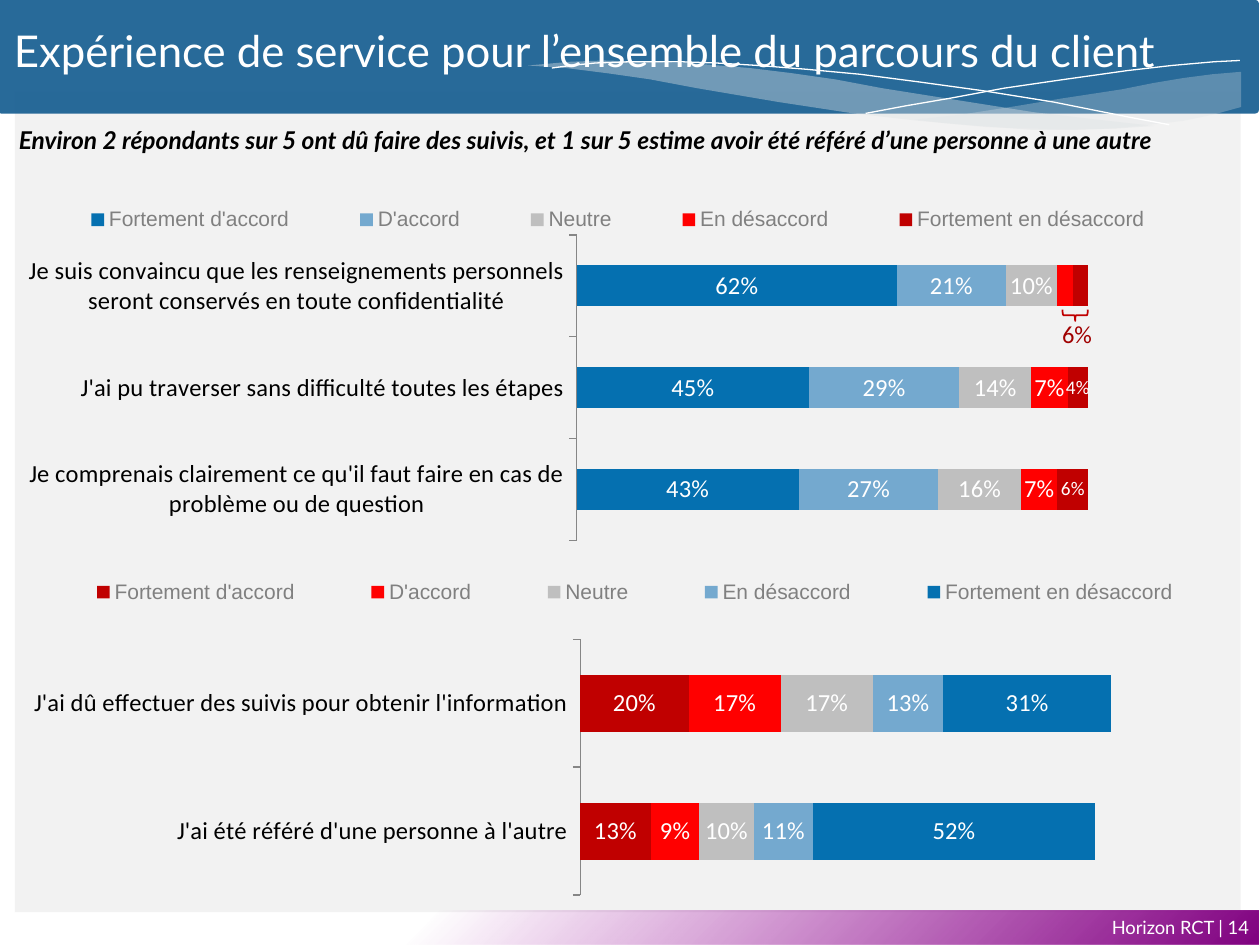
from lxml import etree
from pptx import Presentation, util as u
from pptx.chart.data import CategoryChartData
from pptx.dml.color import RGBColor
from pptx.enum import chart as ch, shapes, text
from pptx.oxml import parse_xml
from pptx.oxml.ns import nsdecls, qn


def paint(fill, colour, opacity=100):
    fill.solid()
    fill.fore_color.rgb = RGBColor.from_string(colour)
    if opacity < 100:
        srgb = fill._xPr.find(".//" + qn("a:srgbClr"))
        etree.SubElement(srgb, qn("a:alpha")).set("val", str(opacity * 1000))


def add_text(place, words, size, font, colour, align=text.PP_ALIGN.LEFT,
             anchor=text.MSO_ANCHOR.TOP, wrap=True, strong=False):
    box = page.shapes.add_textbox(*map(u.Cm, place))
    box.text_frame.word_wrap = wrap
    box.text_frame.vertical_anchor = anchor
    para = box.text_frame.paragraphs[0]
    para.alignment = align
    span = para.add_run()
    span.text = words
    span.font.size, span.font.name = u.Pt(size), font
    span.font.bold = span.font.italic = strong
    paint(span.font.fill, colour)


deck = Presentation()
deck.slide_width, deck.slide_height = u.Cm(25.4), u.Cm(19.05)
page = deck.slides.add_slide(deck.slide_layouts[6])

# Grey panel, footer band and header band
bands = []
for kind, place, colour, opacity in [
    (shapes.MSO_SHAPE.RECTANGLE, (0.3, 1.85, 24.71, 16.54), "F2F2F2", 100),
    (shapes.MSO_SHAPE.RECTANGLE, (-0.05, 18.36, 25.43, 0.69), "800080", 100),
    (shapes.MSO_SHAPE.ROUNDED_RECTANGLE, (-0.05, 0, 25.43, 2.29), "1D6294", 95),
]:
    band = page.shapes.add_shape(kind, *map(u.Cm, place))
    band.shadow.inherit = False
    band.line.fill.background()
    paint(band.fill, colour, opacity)
    bands.append(band)
panel, footer, header = bands
header.adjustments[0] = 0.034

# Footer fades from purple at the right to clear at the left
solid = footer._element.spPr.find(qn("a:solidFill"))
solid.getparent().replace(solid, parse_xml(
    f'<a:gradFill {nsdecls("a")} rotWithShape="1"><a:gsLst>'
    '<a:gs pos="0"><a:srgbClr val="800080"/></a:gs>'
    '<a:gs pos="66000"><a:srgbClr val="9A009A"><a:alpha val="0"/></a:srgbClr></a:gs>'
    '</a:gsLst><a:path path="circle"><a:fillToRect l="100000" t="100000"/></a:path>'
    '</a:gradFill>'))
add_text((0.03, 18.08, 25.4, 1.24), "Horizon RCT | 14", 10.5, "Lato", "FFFFFF",
         text.PP_ALIGN.RIGHT, text.MSO_ANCHOR.MIDDLE)

# Header waves, in units of a hundredth of an inch; opacity 0 means a bare line
waves = [
    (29, [(985, 57), (962, 59), (939, 62), (915, 66), (890, 71), (844, 78),
          (802, 85), (763, 91), (726, 95), (751, 98), (784, 101), (815, 102),
          (852, 103), (884, 102), (913, 99), (939, 96), (963, 91), (985, 85)]),
    (40, [(916, 100), (871, 95), (820, 89), (763, 80), (700, 70), (663, 63),
          (628, 58), (595, 54), (546, 50), (511, 49), (480, 48), (453, 49),
          (419, 52), (449, 54), (481, 58), (516, 63), (553, 70), (618, 81),
          (677, 90), (730, 96), (777, 100), (818, 103), (855, 103), (887, 102)]),
    (0, [(438, 54), (453, 52), (473, 50), (501, 49), (539, 49), (568, 50),
         (602, 52), (640, 55), (683, 59), (729, 65), (780, 72), (836, 81),
         (896, 93), (928, 99)]),
    (0, [(687, 90), (719, 84), (754, 78), (797, 70), (845, 63), (895, 56),
         (930, 52), (964, 49), (984, 48)]),
]
for opacity, points in waves:
    builder = page.shapes.build_freeform(*points[0], scale=u.Cm(0.0254))
    builder.add_line_segments(points[1:], close=opacity > 0)
    wave = builder.convert_to_shape()
    wave.shadow.inherit = False
    if opacity:
        paint(wave.fill, "DFE3E5", opacity)
        wave.line.fill.background()
    else:
        wave.fill.background()
        paint(wave.line.fill, "FFFFFF")
        wave.line.width = u.Pt(0)

# Title and key finding
add_text((0.03, 0.36, 24.99, 1.68),
         "Expérience de service pour l’ensemble du parcours du client",
         25, "Lato", "FFFFFF")
add_text((0.13, 2.39, 24.99, 1.45),
         "Environ 2 répondants sur 5 ont dû faire des suivis, et 1 sur 5 estime "
         "avoir été référé d’une personne à une autre",
         14, "Lato", "000000", strong=True)

# Stacked bar charts
answers = ["Fortement d'accord", "D'accord", "Neutre", "En désaccord",
           "Fortement en désaccord"]
scale = ["0570B0", "74A9CF", "BFBFBF", "FF0000", "C00000"]
charts = [
    dict(top=3.68, height=7.65, gap=150, colours=scale,
         plot=(0.46, 0.138, 0.417, 0.805), legend=(0.017, 0.048, 0.953, 0.1),
         rows={
             "Je comprenais clairement ce qu'il faut faire en cas de problème ou "
             "de question": (0.43, 0.27, 0.16, 0.07, 0.06),
             "J'ai pu traverser sans difficulté toutes les étapes":
                 (0.45, 0.29, 0.14, 0.07, 0.04),
             "Je suis convaincu que les renseignements personnels seront conservés "
             "en toute confidentialité": (0.62, 0.21, 0.1, 0.03, 0.03)},
         hidden=[(3, 2), (4, 2)], small=[(4, 0), (4, 1)]),
    dict(top=11.43, height=8.05, gap=124, colours=scale[::-1],
         plot=(0.463, 0.181, 0.437, 0.641), legend=(0.017, 0.013, 0.98, 0.1),
         rows={
             "J'ai été référé d'une personne à l'autre": (0.13, 0.09, 0.1, 0.11, 0.52),
             "J'ai dû effectuer des suivis pour obtenir l'information":
                 (0.2, 0.17, 0.17, 0.13, 0.31)},
         hidden=[], small=[]),
]
for item in charts:
    data = CategoryChartData(number_format="0%")
    data.categories = list(item["rows"])
    for answer, shares in zip(answers, zip(*item["rows"].values())):
        data.add_series(answer, shares)
    chart = page.shapes.add_chart(
        ch.XL_CHART_TYPE.BAR_STACKED, u.Cm(0.13), u.Cm(item["top"]),
        u.Cm(24.99), u.Cm(item["height"]), data).chart
    chart.has_title = False
    chart.font.size, chart.font.name = u.Pt(14), "Arial"
    paint(chart.font.fill, "000000")

    # Axes
    cat_axis, val_axis = chart.category_axis, chart.value_axis
    cat_axis.major_tick_mark = ch.XL_TICK_MARK.OUTSIDE
    cat_axis.tick_labels.font.size = u.Pt(14)
    cat_axis.tick_labels.font.name = "Calibri"
    paint(cat_axis.format.line.fill, "868686")
    val_axis.minimum_scale, val_axis.maximum_scale = 0, 1
    val_axis.has_major_gridlines = False
    val_axis.major_tick_mark = ch.XL_TICK_MARK.NONE
    val_axis.tick_label_position = ch.XL_TICK_LABEL_POSITION.NONE
    val_axis.format.line.fill.background()

    # Legend
    chart.has_legend = True
    legend = chart.legend
    legend.position = ch.XL_LEGEND_POSITION.TOP
    legend.include_in_layout = False
    legend.font.size = u.Pt(12)
    paint(legend.font.fill, "808080")

    # Fixed places for the plot and the legend
    area = chart._chartSpace.find(".//" + qn("c:plotArea"))
    for holder, frame, target in [(area, item["plot"], '<c:layoutTarget val="inner"/>'),
                                  (legend._element, item["legend"], "")]:
        for old in holder.findall(qn("c:layout")):
            holder.remove(old)
        modes = '<c:xMode val="edge"/><c:yMode val="edge"/>'
        sizes = "".join(f'<c:{k} val="{v}"/>' for k, v in zip("xywh", frame))
        holder.insert(0 if target else 1, parse_xml(
            f'<c:layout {nsdecls("c")}><c:manualLayout>{target}{modes}{sizes}'
            '</c:manualLayout></c:layout>'))

    # Bars and their values
    plot = chart.plots[0]
    plot.gap_width, plot.overlap, plot.vary_by_categories = item["gap"], 100, False
    for series, colour in zip(plot.series, item["colours"]):
        paint(series.format.fill, colour)
        labels = series.data_labels
        labels.show_value = True
        labels.number_format, labels.number_format_is_linked = "0%", False
        labels.font.size, labels.font.name = u.Pt(14), "Calibri"
        paint(labels.font.fill, "FFFFFF")
    for row, col in item["hidden"]:
        plot.series[row].data_labels._element.insert(0, parse_xml(
            f'<c:dLbl {nsdecls("c")}><c:idx val="{col}"/><c:delete val="1"/></c:dLbl>'))
    for row, col in item["small"]:
        font = plot.series[row].points[col].data_label.font
        font.size, font.name = u.Pt(11), "Calibri"
        paint(font.fill, "FFFFFF")

# Brace joining the two disagreeing shares
add_text((21.16, 6.3, 1.12, 0.86), "6%", 14, "Calibri", "A00000", wrap=False)
brace = page.shapes.add_shape(shapes.MSO_SHAPE.LEFT_BRACE,
                              *map(u.Cm, (21.56, 6.1, 0.23, 0.51)))
brace.rotation = 270
brace.shadow.inherit = False
brace.fill.background()
paint(brace.line.fill, "C00000")
brace.line.width = u.Pt(1)

deck.save("out.pptx")
